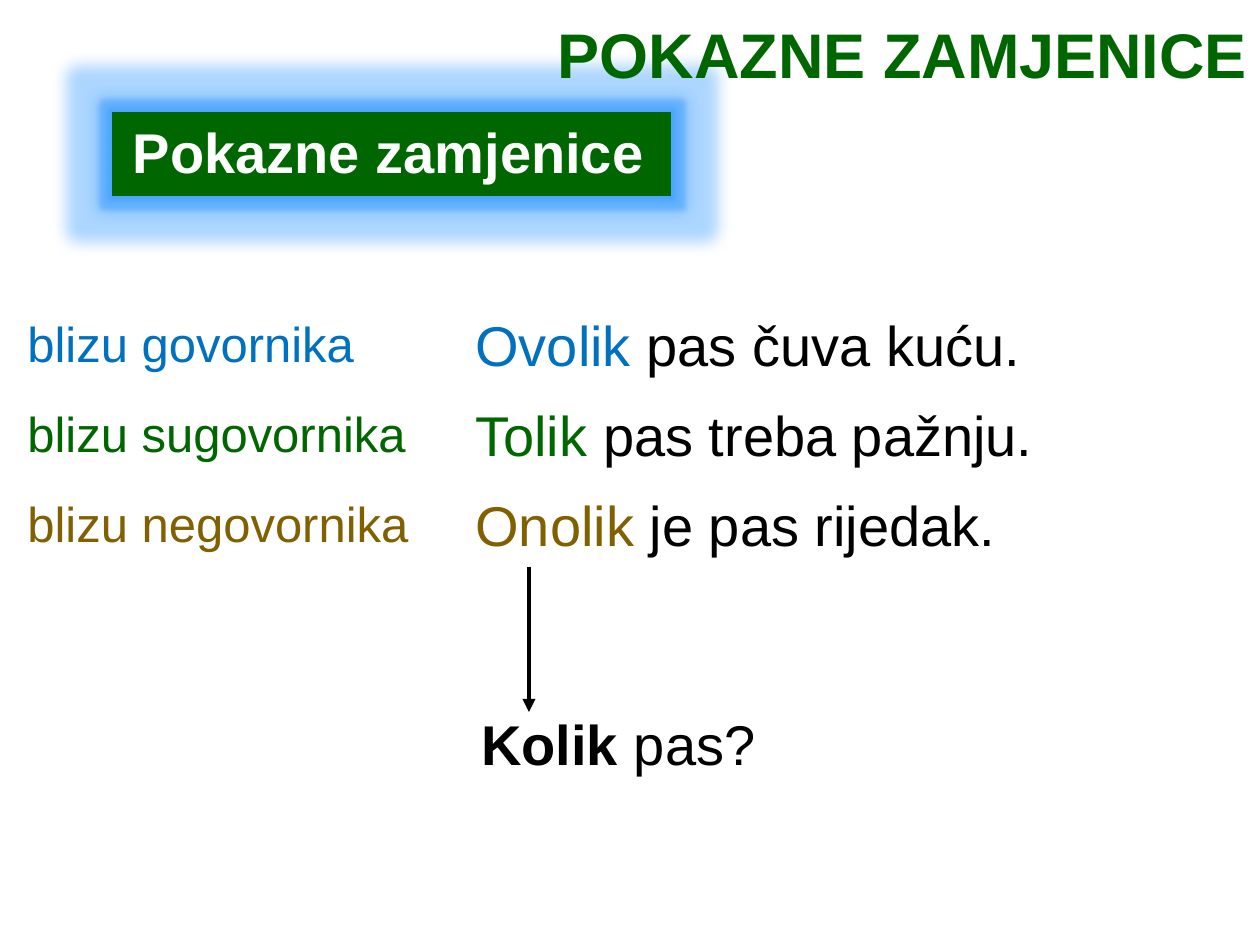
from lxml import etree
from pptx import Presentation
from pptx.dml.color import RGBColor
from pptx.enum.shapes import MSO_CONNECTOR, MSO_SHAPE
from pptx.enum.text import MSO_ANCHOR, PP_ALIGN
from pptx.oxml.ns import qn
from pptx.util import Emu, Pt

PX = 914400 // 126
RECTANGLE, STRAIGHT = MSO_SHAPE.RECTANGLE, MSO_CONNECTOR.STRAIGHT
TOP, BOTTOM = MSO_ANCHOR.TOP, MSO_ANCHOR.BOTTOM
LEFT, RIGHT = PP_ALIGN.LEFT, PP_ALIGN.RIGHT
COLORS = {"green": "006600", "blue": "0070C0", "brown": "806000",
          "black": "000000", "white": "FFFFFF", "glow": "3399FF"}

presentation = Presentation()
presentation.slide_width = Emu(1260 * PX)
presentation.slide_height = Emu(945 * PX)
slide = presentation.slides.add_slide(presentation.slide_layouts[6])


def color(name):
    return RGBColor.from_string(COLORS[name])


def add_text(box, pieces, size, anchor=TOP, align=LEFT, wrap=True):
    """Add one line of text; pieces are (text, color name, bold)."""
    shape = slide.shapes.add_textbox(*[Emu(value * PX) for value in box])
    text_frame = shape.text_frame
    text_frame.word_wrap = wrap
    text_frame.vertical_anchor = anchor
    paragraph = text_frame.paragraphs[0]
    paragraph.alignment = align
    for text, name, bold in pieces:
        run = paragraph.add_run()
        run.text = text
        run.font.name = "Arial"
        run.font.size = Pt(size)
        run.font.bold = bold
        run.font.color.rgb = color(name)
    return shape


# Green banner with a wide and a narrow glow
for radius in (18, 5):
    banner = slide.shapes.add_shape(
        RECTANGLE, *[Emu(value * PX) for value in (112, 112, 559, 84)])
    banner.fill.solid()
    banner.fill.fore_color.rgb = color("green")
    banner.line.fill.background()
    banner.shadow.inherit = False
    effects = banner._element.spPr.find(qn("a:effectLst"))
    glow = etree.SubElement(effects, qn("a:glow"), rad=str(Pt(radius)))
    glow_color = etree.SubElement(glow, qn("a:srgbClr"), val=COLORS["glow"])
    etree.SubElement(glow_color, qn("a:alpha"), val="40000")

banner_text = add_text((124, 84, 530, 106),
                       [("Pokazne zamjenice", "white", True)], 32, BOTTOM)
banner_frame = banner_text.text_frame
banner_frame.margin_left = banner_frame.margin_right = Emu(9 * PX)
banner_frame.margin_top = banner_frame.margin_bottom = Emu(5 * PX)
banner_frame.paragraphs[0].space_before = Pt(10)

# Slide title
title = add_text((198, 3, 1062, 95), [("POKAZNE ZAMJENICE", "green", True)],
                 36, BOTTOM, RIGHT)
title.text_frame.paragraphs[0].line_spacing = 0.9

# Distance labels beside their example sentences
rows = [
    ("blizu govornika", "Ovolik ", "pas čuva kuću.", "blue"),
    ("blizu sugovornika", "Tolik ", "pas treba pažnju.", "green"),
    ("blizu negovornika", "Onolik ", "je pas rijedak.", "brown"),
]
for index, (label, pronoun, rest, name) in enumerate(rows):
    top = 304 + 90 * index
    add_text((15, top + 3, 412, 72), [(label, name, False)], 28, wrap=False)
    add_text((463, top, 780, 81),
             [(pronoun, name, False), (rest, "black", False)], 32)

# Arrow down to the question
arrow = slide.shapes.add_connector(
    STRAIGHT, *[Emu(value * PX) for value in (529, 567, 529, 712)])
arrow.line.color.rgb = color("black")
arrow.line.width = Pt(2.5)
etree.SubElement(arrow.line._get_or_add_ln(), qn("a:tailEnd"), type="triangle")
etree.SubElement(arrow._element.spPr, qn("a:effectLst"))

add_text((469, 703, 696, 81),
         [("Kolik ", "black", True), ("pas?", "black", False)], 32)

presentation.save("out.pptx")
